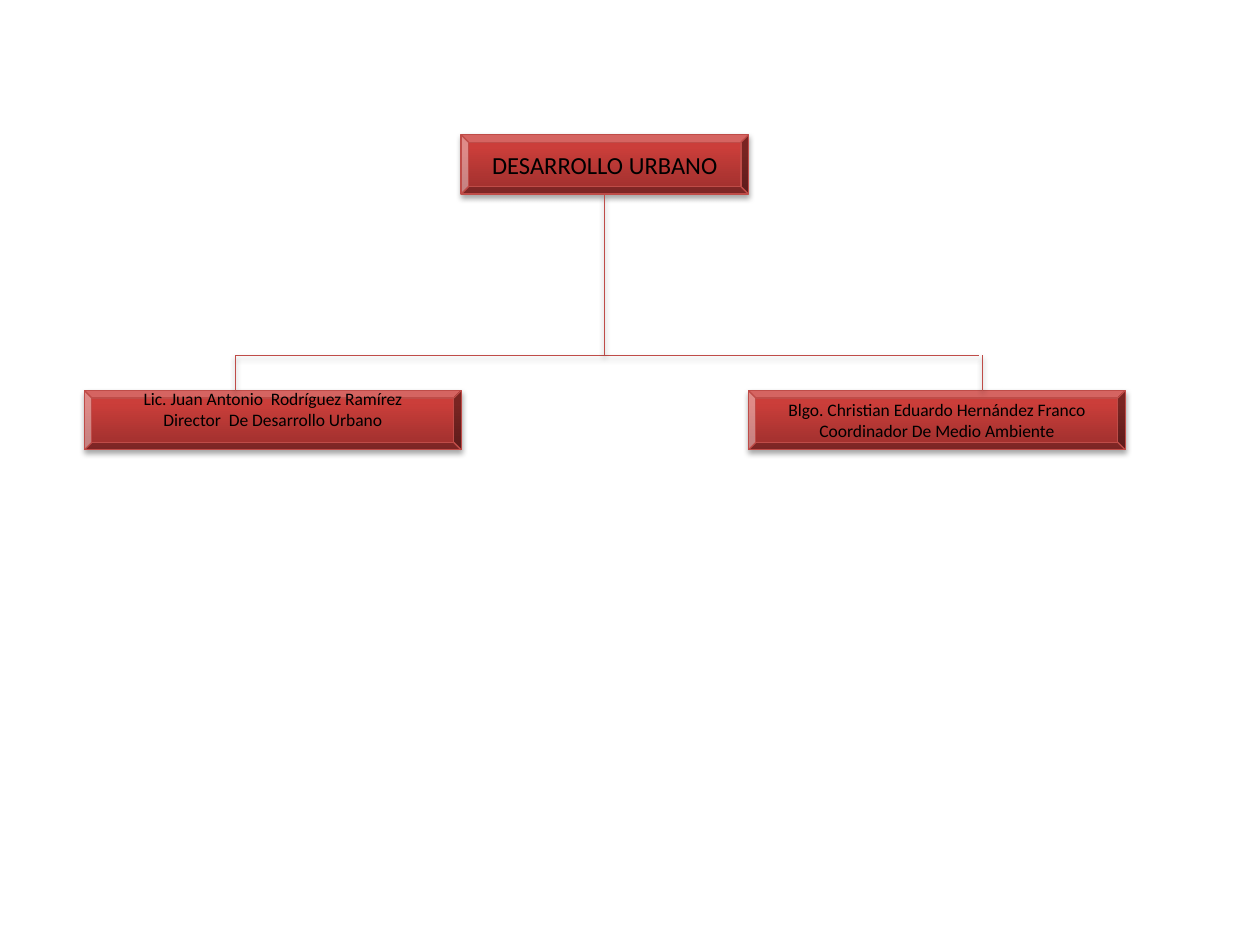
import pptx
import pptx.dml.color
import pptx.enum.shapes
import pptx.enum.text
import pptx.oxml.ns
import pptx.util
from lxml import etree

COLUMNS, ROWS = 100, 75
RED_STOPS = [(0, "9C2F2D"), (80, "CB3E3A"), (100, "CE3B37")]


def color(hex_value):
    return pptx.dml.color.RGBColor.from_string(hex_value)


def add_element(parent, tag, **attributes):
    values = {name: str(value) for name, value in attributes.items()}
    return etree.SubElement(parent, pptx.oxml.ns.qn(tag), values)


def set_all(target, values):
    for name, value in values.items():
        setattr(target, name, value)


class OrganizationChart:
    """Style and current slide; lengths are columns and rows of the grid."""

    font_name = "Calibri"
    text_color = "000000"
    line_color = "BF4C48"
    box_height = 4.7

    def __init__(self, presentation):
        self.column = presentation.slide_width / COLUMNS
        self.row = presentation.slide_height / ROWS
        self.slide = presentation.slides.add_slide(presentation.slide_layouts[6])

    def x(self, columns):
        return round(columns * self.column)

    def y(self, rows):
        return round(rows * self.row)

    def outline_and_shadow(self, item):
        item.line.color.rgb = color(self.line_color)
        item.line.width = pptx.util.Pt(0.75)
        effects = add_element(item._element.spPr, "a:effectLst")
        shadow = add_element(effects, "a:outerShdw", blurRad=pptx.util.Pt(3.1),
                             dist=pptx.util.Pt(1.8), dir=90 * 60000, rotWithShape=0)
        shade = add_element(shadow, "a:srgbClr", val="000000")
        add_element(shade, "a:alpha", val=35000)

    def red_gradient(self, shape):
        shape.fill.gradient()
        shape.fill.gradient_angle = 90
        stops = shape._element.spPr.find(".//" + pptx.oxml.ns.qn("a:gsLst"))
        for stop in list(stops):
            stops.remove(stop)
        for position, hex_value in RED_STOPS:
            stop = add_element(stops, "a:gs", pos=position * 1000)
            add_element(stop, "a:srgbClr", val=hex_value)

    def box(self, left, top, width, lines, size, margin_bottom=0.05):
        shape = self.slide.shapes.add_shape(
            pptx.enum.shapes.MSO_SHAPE.BEVEL,
            self.x(left), self.y(top), self.x(width), self.y(self.box_height))
        self.red_gradient(shape)
        self.outline_and_shadow(shape)
        frame = shape.text_frame
        set_all(frame, {"word_wrap": True,
                        "vertical_anchor": pptx.enum.text.MSO_ANCHOR.MIDDLE,
                        "margin_bottom": pptx.util.Inches(margin_bottom)})
        frame.text = "\n".join(lines)
        for paragraph in frame.paragraphs:
            paragraph.alignment = pptx.enum.text.PP_ALIGN.CENTER
            for run in paragraph.runs:
                set_all(run.font, {"name": self.font_name, "size": pptx.util.Pt(size)})
                run.font.color.rgb = color(self.text_color)
        return shape

    def line(self, start, end, begin_shape=None):
        """Draw a straight line, leaving the bottom of begin_shape if given."""
        connector = self.slide.shapes.add_connector(
            pptx.enum.shapes.MSO_CONNECTOR.STRAIGHT,
            self.x(start[0]), self.y(start[1]), self.x(end[0]), self.y(end[1]))
        if begin_shape is not None:
            connector.begin_connect(begin_shape, 2)
        self.outline_and_shadow(connector)


def main():
    presentation = pptx.Presentation()
    set_all(presentation, {"slide_width": pptx.util.Inches(10),
                           "slide_height": pptx.util.Inches(7.5)})
    chart = OrganizationChart(presentation)

    head_left, head_top, head_width = 36.6, 10.7, 22.8
    staff_top, staff_width = 31, 29.9
    bus_row, left_drop, right_drop = 28.2, 18.7, 78
    center = head_left + head_width / 2

    department = chart.box(head_left, head_top, head_width, ["DESARROLLO URBANO"], 14)
    chart.box(head_left - staff_width, staff_top, staff_width,
              ["Lic. Juan Antonio  Rodríguez Ramírez",
               "Director  De Desarrollo Urbano"], 10, margin_bottom=0.22)
    chart.box(head_left + head_width, staff_top, staff_width,
              ["Blgo. Christian Eduardo Hernández Franco",
               "Coordinador De Medio Ambiente"], 10)

    chart.line((right_drop - 0.3, bus_row), (left_drop, bus_row))
    chart.line((center, head_top + chart.box_height), (center, bus_row), department)
    for drop in (left_drop, right_drop):
        chart.line((drop, bus_row), (drop, staff_top))

    presentation.save("out.pptx")


if __name__ == "__main__":
    main()
